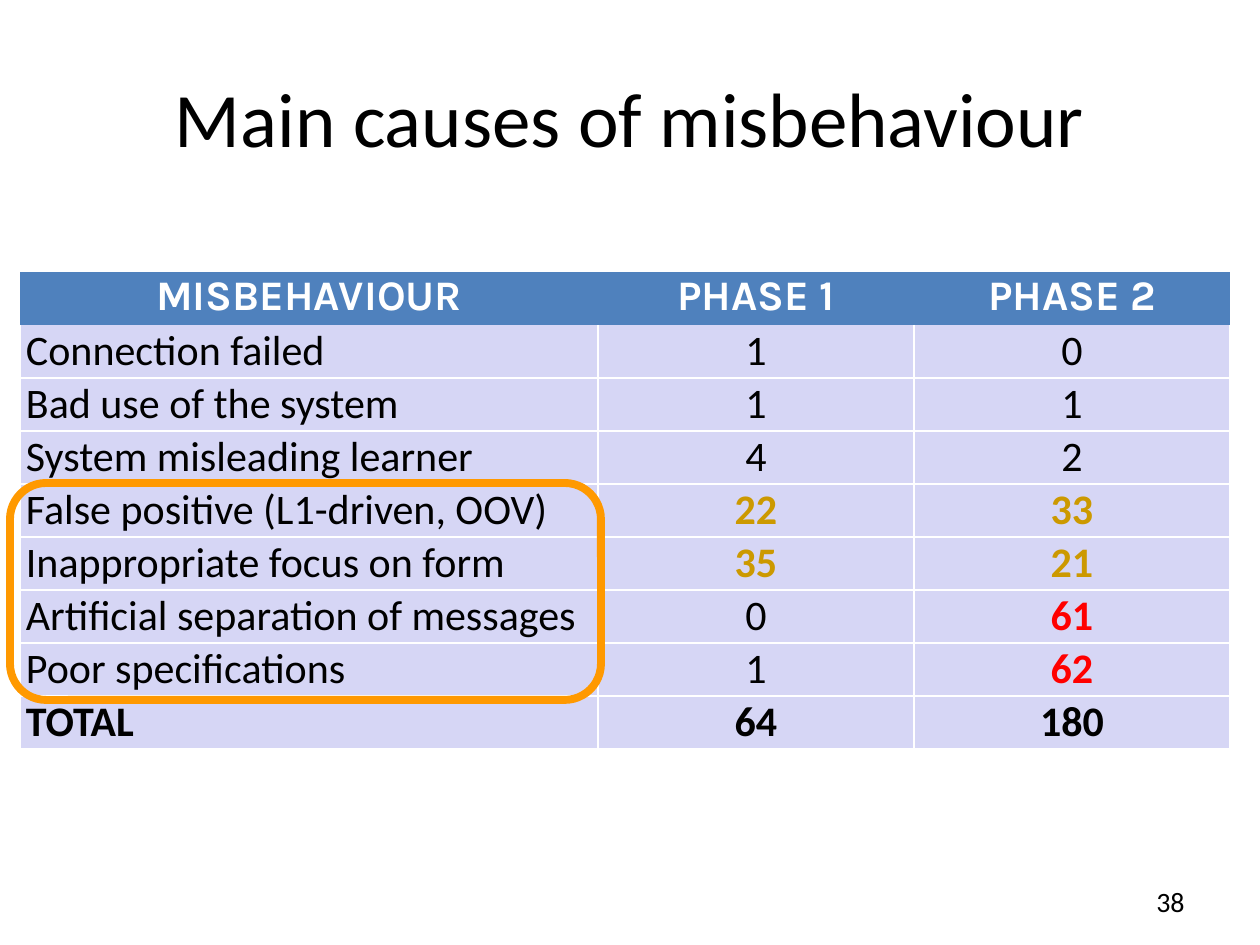
from pptx import Presentation
from pptx.dml.color import RGBColor
from pptx.enum.shapes import MSO_SHAPE as Shape
from pptx.enum.text import MSO_ANCHOR as Anchor, MSO_AUTO_SIZE as AutoSize, PP_ALIGN as Align
from pptx.oxml.ns import qn
from pptx.util import Emu, Pt
from lxml.etree import SubElement

BLACK = RGBColor(0x00, 0x00, 0x00)
WHITE = RGBColor(0xFF, 0xFF, 0xFF)
BLUE = RGBColor(0x4F, 0x81, 0xBD)
LAVENDER = RGBColor(0xD6, 0xD6, 0xF5)
GOLD = RGBColor(0xCC, 0x99, 0x00)
RED = RGBColor(0xFF, 0x00, 0x00)
ORANGE = RGBColor(0xFF, 0x99, 0x00)

HEADINGS = ["MISBEHAVIOUR", "PHASE 1", "PHASE 2"]
CAUSES = [
    ["Connection failed", "1", "0"],
    ["Bad use of the system", "1", "1"],
    ["System misleading learner", "4", "2"],
    ["False positive (L1-driven, OOV)", "22", "33"],
    ["Inappropriate focus on form", "35", "21"],
    ["Artificial separation of messages", "0", "61"],
    ["Poor specifications", "1", "62"],
    ["TOTAL", "64", "180"],
]
HIGHLIGHTS = {"22": GOLD, "33": GOLD, "35": GOLD, "21": GOLD, "61": RED, "62": RED}
TOTALS = {"TOTAL", "64", "180"}


def px(count):
    return Emu(round(count * 914400 / 126))


class SlideBuilder:
    """Holds the text style and the current slide."""

    def __init__(self, page, font="Calibri"):
        self.page = page
        self.font = font

    def add_text(self, para, text, size, color=BLACK, bold=False, align=Align.CENTER, font=None):
        para.alignment = align
        span = para.add_run()
        span.text = text
        span.font.name = font or self.font
        span.font.size = Pt(size)
        span.font.bold = bold
        span.font.color.rgb = color

    def title(self, text, left, top, width, height):
        box = self.page.shapes.title
        box.left, box.top, box.width, box.height = map(px, (left, top, width, height))
        frame = box.text_frame
        frame.auto_size = AutoSize.NONE
        frame.vertical_anchor = Anchor.MIDDLE
        self.add_text(frame.paragraphs[0], text, 44)

    def page_number(self, text, left, top, width, height):
        box = self.page.shapes.add_textbox(*map(px, (left, top, width, height)))
        frame = box.text_frame
        frame.word_wrap = True
        frame.vertical_anchor = Anchor.MIDDLE
        self.add_text(frame.paragraphs[0], text, 16, align=Align.RIGHT)

    def borders(self, cell, sides):
        properties = cell._tc.get_or_add_tcPr()
        for side in "LRTB":
            line = SubElement(properties, qn(f"a:ln{side}"), w=str(Pt(1)))
            if side in sides:
                fill = SubElement(line, qn("a:solidFill"))
                SubElement(fill, qn("a:srgbClr"), val=str(WHITE))
            else:
                SubElement(line, qn("a:noFill"))

    def cell(self, cell, text, fill, sides, spacing, **style):
        self.borders(cell, sides)
        cell.fill.solid()
        cell.fill.fore_color.rgb = fill
        cell.margin_left = cell.margin_right = px(6)
        cell.margin_top = cell.margin_bottom = 0
        para = cell.text_frame.paragraphs[0]
        para.line_spacing = spacing
        self.add_text(para, text, 24, **style)

    def table(self, headings, rows, left, top, widths, row_height):
        count = len(rows) + 1
        frame = self.page.shapes.add_table(
            count, len(widths), px(left), px(top), px(sum(widths)), px(row_height * count))
        grid = frame.table
        for column, width in zip(grid.columns, widths):
            column.width = px(width)
        for row in grid.rows:
            row.height = px(row_height)
        for column, heading in enumerate(headings):
            self.cell(grid.cell(0, column), heading, BLUE, "", 1.01,
                      color=WHITE, bold=True, font="Karla")
        for number, values in enumerate(rows, 1):
            for column, value in enumerate(values):
                self.cell(grid.cell(number, column), value, LAVENDER,
                          "LRB" if number == 1 else "LRTB", 1.02,
                          color=HIGHLIGHTS.get(value, BLACK),
                          bold=value in HIGHLIGHTS or value in TOTALS,
                          align=Align.CENTER if column else Align.LEFT)

    def outline(self, left, top, width, height, color, weight):
        box = self.page.shapes.add_shape(
            Shape.ROUNDED_RECTANGLE, *map(px, (left, top, width, height)))
        box.shadow.inherit = False
        box.fill.background()
        box.line.color.rgb = color
        box.line.width = Pt(weight)


def main():
    deck = Presentation()
    deck.slide_width, deck.slide_height = px(1260), px(945)
    builder = SlideBuilder(deck.slides.add_slide(deck.slide_layouts[5]))
    builder.title("Main causes of misbehaviour", 63, 38, 1134, 157)
    builder.table(HEADINGS, CAUSES, 20, 272, [578, 316, 316], 53)
    builder.page_number("38", 903, 876, 294, 50)
    builder.outline(10, 483, 591, 217, ORANGE, 4.5)
    deck.save("out.pptx")


if __name__ == "__main__":
    main()
